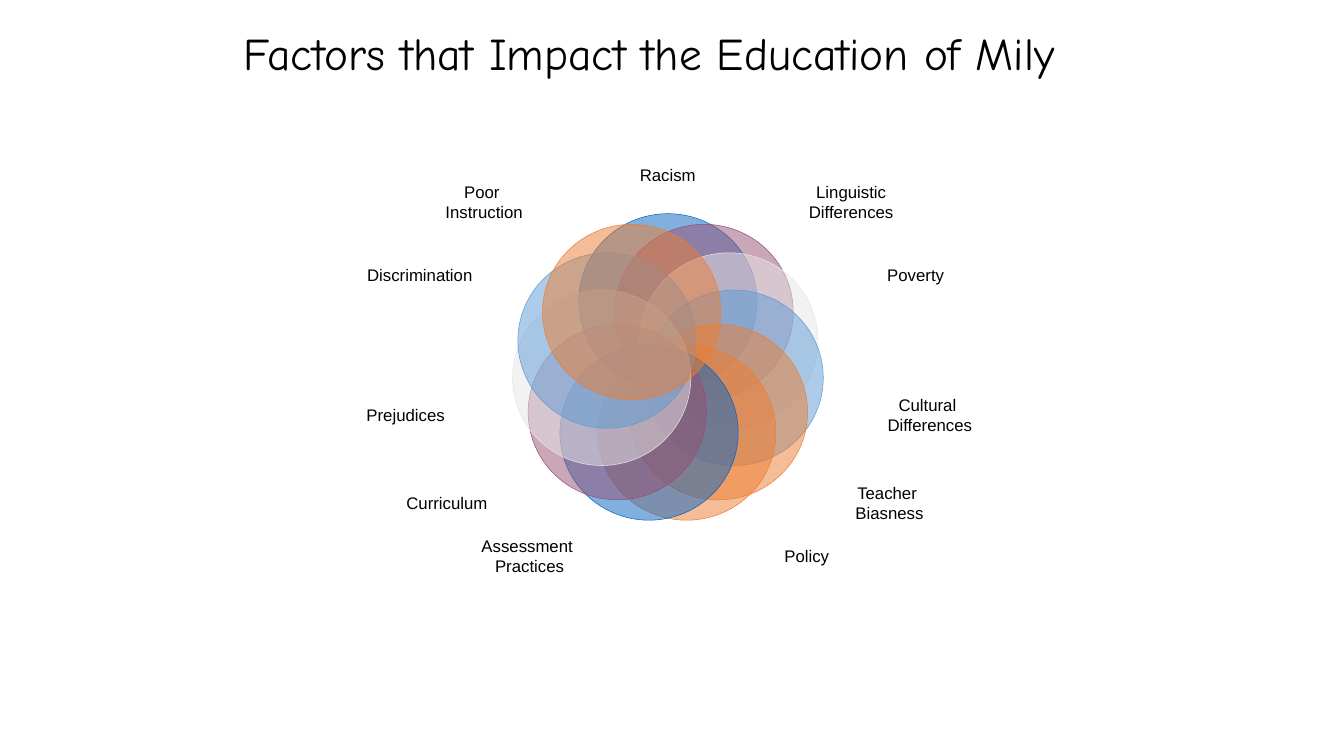
from dataclasses import dataclass
from math import cos, pi, sin

from lxml.etree import SubElement
from pptx import Presentation
from pptx.dml.color import RGBColor
from pptx.enum.shapes import MSO_SHAPE as Preset
from pptx.enum.text import MSO_ANCHOR as Anchor, MSO_AUTO_SIZE as Fit, PP_ALIGN as Align
from pptx.oxml.ns import qn
from pptx.shapes.shapetree import GroupShapes as Shapes
from pptx.text.text import TextFrame as Frame
from pptx.util import Pt

BLUE, PLUM, GREY, SKY, ORANGE = "0563C1", "954F72", "E7E6E6", "5B9BD5", "ED7D31"
MID_X, MID_Y, RING = 477.1, 263.1, 47.8
WIDE, HIGH = 127.4, 125.3
LABEL_HIGH = 31.7


@dataclass(frozen=True)
class Factor:
    text: str
    color: str
    left: float
    top: float


FACTORS = [
    Factor("Racism", BLUE, 413.3, 108.7),
    Factor("Linguistic\nDifferences", PLUM, 544.3, 128.2),
    Factor("Poverty", GREY, 590.4, 180.7),
    Factor("Cultural \nDifferences", SKY, 600.5, 280.4),
    Factor("Teacher \nBiasness", ORANGE, 571.7, 343.4),
    Factor("Policy", ORANGE, 512.6, 380.9),
    Factor("Assessment \nPractices", BLUE, 314.6, 380.9),
    Factor("Curriculum", PLUM, 255.6, 343.4),
    Factor("Prejudices", GREY, 226.1, 280.4),
    Factor("Discrimination", SKY, 236.2, 180.7),
    Factor("Poor \nInstruction", ORANGE, 282.2, 128.2),
]


def rgb(color: str) -> RGBColor:
    return RGBColor.from_string(color)


def write(frame: Frame, text: str, *, font: str, size: float, color: str = "000000",
          space: float = 1.0, wrap: bool = False) -> None:
    """Fill a frame with centred text, one paragraph a line."""
    frame.text = text
    frame.word_wrap = wrap
    frame.auto_size = Fit.NONE
    frame.vertical_anchor = Anchor.MIDDLE
    for para in frame.paragraphs:
        para.alignment = Align.CENTER
        para.line_spacing = space
        for run in para.runs:
            run.font.name = font
            run.font.size = Pt(size)
            run.font.color.rgb = rgb(color)


def add_disc(shapes: Shapes, color: str, angle: float) -> None:
    """Place a half clear disc on the ring, clockwise from the top."""
    left = MID_X + RING * sin(angle) - WIDE / 2
    top = MID_Y - RING * cos(angle) - HIGH / 2
    disc = shapes.add_shape(Preset.OVAL, Pt(left), Pt(top), Pt(WIDE), Pt(HIGH))
    disc.shadow.inherit = False
    disc.fill.solid()
    disc.fill.fore_color.rgb = rgb(color)
    tint = disc.element.spPr.find(qn("a:solidFill"))[0]
    SubElement(tint, qn("a:alpha"), val="50000")
    disc.line.color.rgb = rgb(color)
    disc.line.width = Pt(0.37)


def add_label(shapes: Shapes, factor: Factor) -> None:
    box = shapes.add_textbox(Pt(factor.left), Pt(factor.top), Pt(WIDE), Pt(LABEL_HIGH))
    frame = box.text_frame
    frame.margin_left = frame.margin_right = frame.margin_top = frame.margin_bottom = 0
    write(frame, factor.text, font="Arial", size=12)


def main() -> None:
    deck = Presentation()
    deck.slide_width, deck.slide_height = Pt(960), Pt(540)
    slide = deck.slides.add_slide(deck.slide_layouts.get_by_name("Title Only"))

    title = slide.shapes.title
    title.left, title.top, title.width, title.height = Pt(39.6), Pt(20.9), Pt(848.2), Pt(41)
    write(title.text_frame, "Factors that Impact the Education of Mily",
          font="Comic Neue", size=32.4, space=0.8, wrap=True)

    venn = slide.shapes.add_group_shape().shapes
    for rank, factor in enumerate(FACTORS):
        add_disc(venn, factor.color, 2 * pi * rank / len(FACTORS))
        add_label(venn, factor)
    deck.save("out.pptx")


if __name__ == "__main__":
    main()
